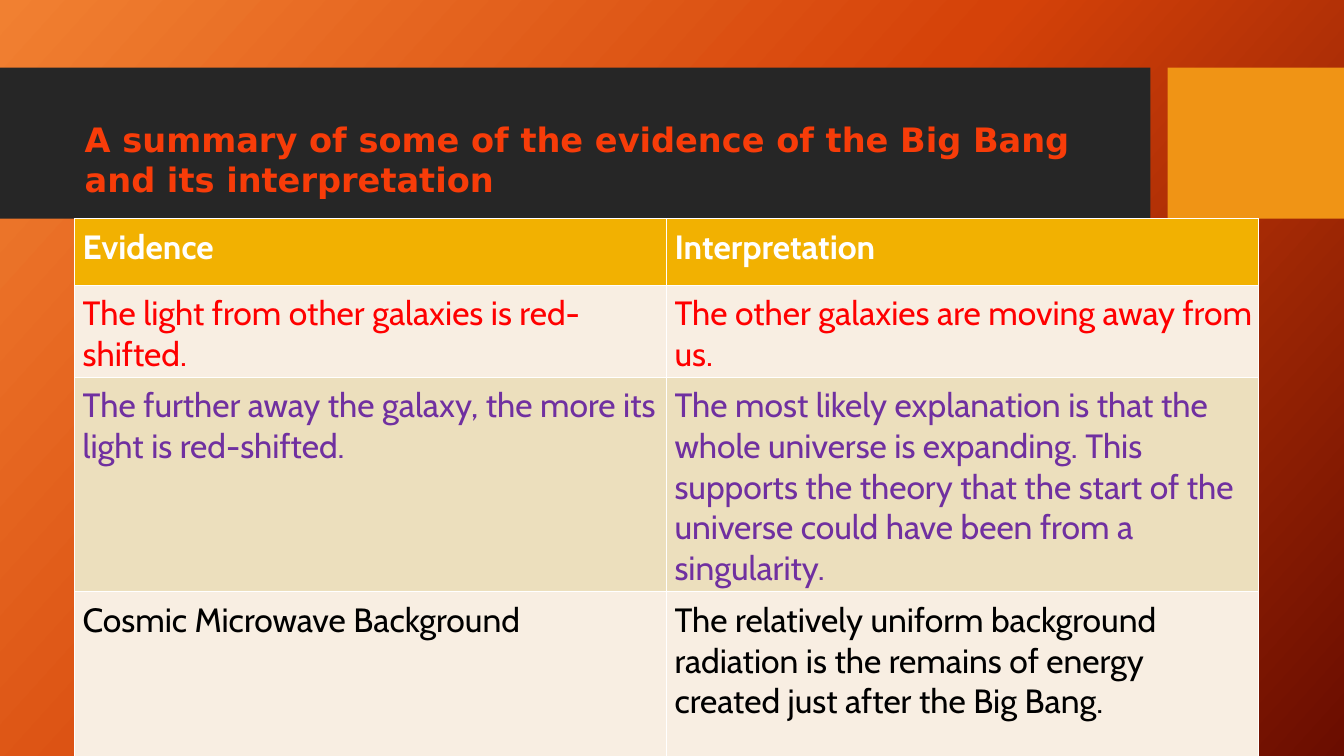
from copy import deepcopy

from lxml import etree
from pptx import Presentation
from pptx.dml.color import RGBColor
from pptx.enum.shapes import MSO_SHAPE
from pptx.enum.text import MSO_ANCHOR, MSO_AUTO_SIZE, PP_ALIGN
from pptx.oxml.ns import qn
from pptx.util import Pt

RECT = MSO_SHAPE.RECTANGLE
TOP = MSO_ANCHOR.TOP
LEFT = PP_ALIGN.LEFT
GROW = MSO_AUTO_SIZE.SHAPE_TO_FIT_TEXT

PX = 9144
COLORS = {
    "glow": "F18031", "flame": "D54209", "ember": "6A0D00",
    "bar": "262626", "accent": "F09415", "title": "F73C09",
    "header": "F2B101", "light": "F8EEE2", "tan": "ECDFBD",
    "white": "FFFFFF", "red": "FF0000", "purple": "7030A0", "black": "000000",
}
ROWS = [
    (66, "header", "white", "Evidence", "Interpretation"),
    (66, "light", "red", "The light from other galaxies is red-shifted.",
     "The other galaxies are moving away from us."),
    (213, "tan", "purple",
     "The further away the galaxy, the more its light is red-shifted.",
     "The most likely explanation is that the whole universe is expanding. "
     "This supports the theory that the start of the universe could have been "
     "from a singularity."),
    (164, "light", "black", "Cosmic Microwave Background",
     "The relatively uniform background radiation is the remains of energy "
     "created just after the Big Bang."),
]


def px(n):
    return n * PX


def rgb(name):
    return RGBColor.from_string(COLORS[name])


def add_run(p, text, font, color, bold):
    p.alignment = LEFT
    r = p.add_run()
    r.text = text
    r.font.name = font
    r.font.size = Pt(24)
    r.font.bold = bold
    r.font.color.rgb = rgb(color)


def paint_background(s):
    fill = s.background.fill
    fill.gradient()
    fill.gradient_angle = 318
    stops = s._element.find(".//" + qn("a:gsLst"))
    stops.insert(1, deepcopy(stops[0]))
    for stop, pos, name in zip(fill.gradient_stops, (0, 0.5, 1),
                               ("glow", "flame", "ember")):
        stop.position = pos
        stop.color.rgb = rgb(name)


def add_band(s, y, h):
    for x, w, name in ((0, 1141, "bar"), (1158, 175, "accent")):
        sp = s.shapes.add_shape(RECT, px(x), px(y), px(w), px(h))
        sp.shadow.inherit = False
        sp.fill.solid()
        sp.fill.fore_color.rgb = rgb(name)
        sp.line.fill.background()


def add_borders(cell):
    tcPr = cell._tc.get_or_add_tcPr()
    for i, side in enumerate(("lnL", "lnR", "lnT", "lnB")):
        ln = etree.Element(qn("a:" + side), w=str(Pt(0.75)))
        solid = etree.SubElement(ln, qn("a:solidFill"))
        etree.SubElement(solid, qn("a:srgbClr"), val=COLORS["white"])
        tcPr.insert(i, ln)


def add_evidence_table(s, x, y, w, h):
    frame = s.shapes.add_table(len(ROWS), 2, px(x), px(y), px(w), px(h))
    table = frame.table
    for col in table.columns:
        col.width = px(w // 2)
    for i, (height, fill, color, *texts) in enumerate(ROWS):
        table.rows[i].height = px(height)
        for j, text in enumerate(texts):
            cell = table.cell(i, j)
            cell.margin_left = cell.margin_top = px(8)
            cell.margin_right = px(5)
            cell.margin_bottom = px(2)
            cell.fill.solid()
            cell.fill.fore_color.rgb = rgb(fill)
            add_borders(cell)
            add_run(cell.text_frame.paragraphs[0], text, "Cabin", color, i == 0)


def place_title(s, x, y, w, h):
    sp = s.shapes.title
    s.shapes._spTree.append(sp._element)
    sp.left, sp.top, sp.width, sp.height = px(x), px(y), px(w), px(h)
    tf = sp.text_frame
    tf.word_wrap = True
    tf.auto_size = GROW
    tf.vertical_anchor = TOP
    add_run(tf.paragraphs[0],
            "A summary of some of the evidence of the Big Bang and its interpretation",
            "DejaVu Sans", "title", True)


def main():
    prs = Presentation()
    prs.slide_width, prs.slide_height = px(1333), px(750)
    s = prs.slides.add_slide(prs.slide_layouts[5])
    paint_background(s)
    add_band(s, 67, 150)
    add_evidence_table(s, 74, 217, 1174, 533)
    place_title(s, 74, 113, 1059, 50)
    prs.save("out.pptx")


if __name__ == "__main__":
    main()
